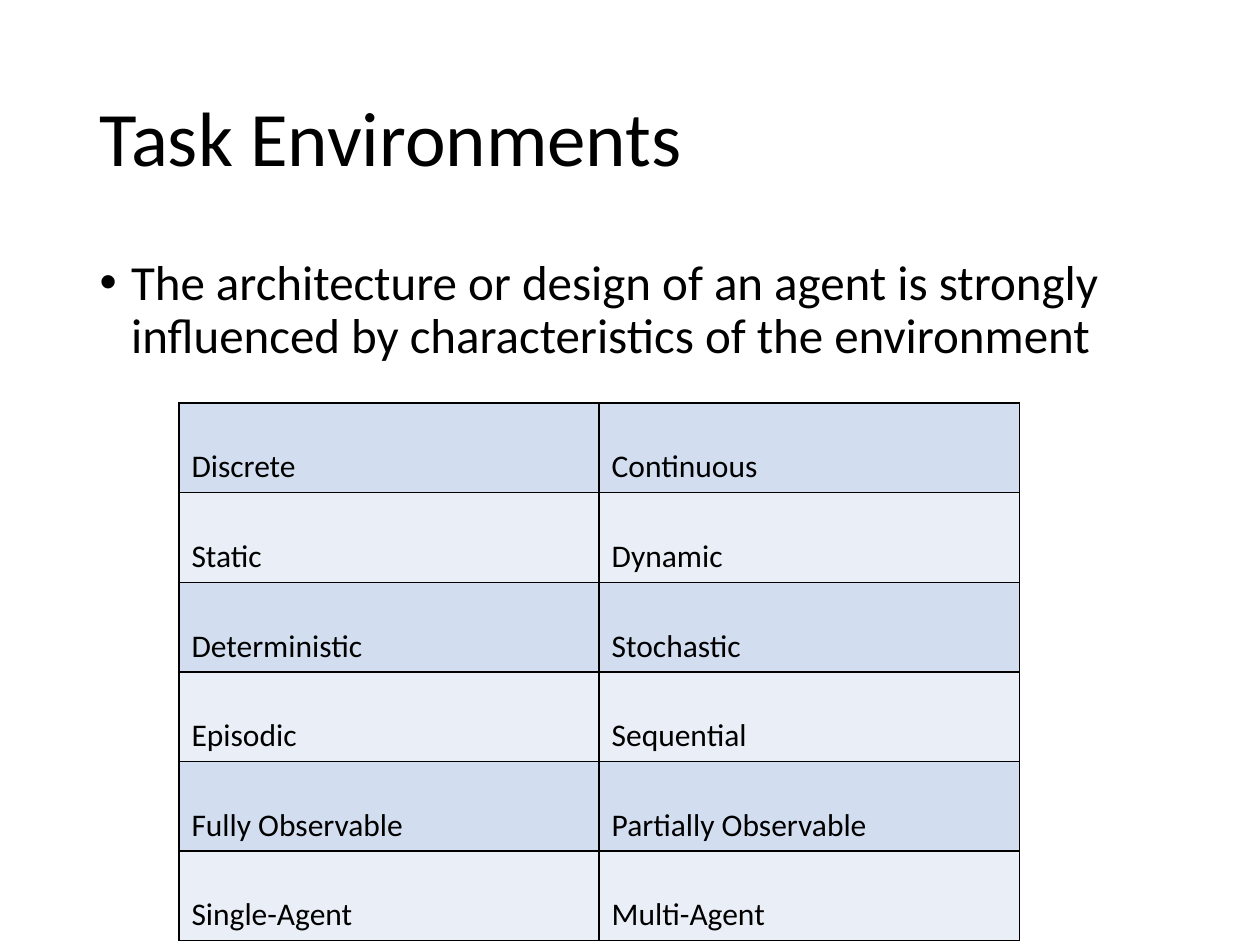
from lxml import etree
from pptx import Presentation
from pptx import util as u
from pptx.dml.color import RGBColor
from pptx.enum import text
from pptx.oxml import ns

PAIRS = [
    ("Discrete", "Continuous"),
    ("Static", "Dynamic"),
    ("Deterministic", "Stochastic"),
    ("Episodic", "Sequential"),
    ("Fully Observable", "Partially Observable"),
    ("Single-Agent", "Multi-Agent"),
]


def rgb(value):
    """Turn a hex string into a colour."""
    return RGBColor.from_string(value)


class Deck:
    """Hold the style and the current slide."""

    font, ink, bands = "Calibri", "000000", ("D2DEEF", "EAEFF7")

    def __init__(self, prs):
        """Add a title and content slide."""
        self.s = prs.slides.add_slide(prs.slide_layouts[1])

    def paragraph(self, tf, words, size, **formats):
        """Fill and format the first paragraph."""
        p = tf.paragraphs[0]
        for name, value in formats.items():
            setattr(p, name, value)
        r = p.add_run()
        r.text = words
        for name, value in {"name": self.font, "size": u.Pt(size)}.items():
            setattr(r.font, name, value)
        r.font.color.rgb = rgb(self.ink)
        return p

    def placeholder(self, index, box, words, size, anchor, **formats):
        """Move and fill a placeholder."""
        sp = self.s.placeholders[index]
        for name, value in zip(("left", "top", "width", "height"), box):
            setattr(sp, name, u.Inches(value))
        tf = sp.text_frame
        frame = {"word_wrap": True, "vertical_anchor": anchor,
                 "auto_size": text.MSO_AUTO_SIZE.NONE}
        for name, value in frame.items():
            setattr(tf, name, value)
        return self.paragraph(tf, words, size, line_spacing=0.9,
                              alignment=text.PP_ALIGN.LEFT, **formats)

    def title(self, box, words):
        """Fill the title."""
        self.placeholder(0, box, words, 44, text.MSO_ANCHOR.MIDDLE)

    def bullet(self, box, words):
        """Fill the body with one bullet."""
        p = self.placeholder(1, box, words, 28, text.MSO_ANCHOR.TOP,
                             space_before=u.Pt(10))
        pPr = p._p.get_or_add_pPr()
        for name, value in {"marL": 0.25, "indent": -0.25}.items():
            pPr.set(name, str(u.Inches(value)))
        etree.SubElement(pPr, ns.qn("a:buFont")).set("typeface", "Arial")
        etree.SubElement(pPr, ns.qn("a:buChar")).set("char", "•")

    def border(self, cell):
        """Draw a thin line on each side of a cell."""
        tcPr = cell._tc.get_or_add_tcPr()
        for i, side in enumerate("LRTB"):
            ln = etree.Element(ns.qn(f"a:ln{side}"), w=str(u.Pt(1)))
            fill = etree.SubElement(ln, ns.qn("a:solidFill"))
            etree.SubElement(fill, ns.qn("a:srgbClr")).set("val", self.ink)
            tcPr.insert(i, ln)

    def table(self, box, rows, row_height):
        """Add a banded table."""
        frame = self.s.shapes.add_table(len(rows), len(rows[0]), *map(u.Inches, box))
        for i, row in enumerate(rows):
            frame.table.rows[i].height = u.Inches(row_height)
            for j, words in enumerate(row):
                cell = frame.table.cell(i, j)
                cell.fill.solid()
                cell.fill.fore_color.rgb = rgb(self.bands[i % 2])
                self.border(cell)
                p = self.paragraph(cell.text_frame, words, 18, line_spacing=2.0)
                p.runs[0].font.bold = False
        frame.height = u.Inches(box[3])


def main():
    """Build the slide."""
    prs = Presentation()
    prs.slide_width, prs.slide_height = u.Inches(10), u.Inches(7.5)
    deck = Deck(prs)
    deck.title((0.69, 0.4, 8.62, 1.45), "Task Environments")
    deck.bullet((0.69, 2, 8.62, 4.76), "The architecture or design of an agent is "
                "strongly influenced by characteristics of the environment")
    deck.table((1.42, 3.2, 6.67, 4.2), PAIRS, 0.41)
    prs.save("out.pptx")


if __name__ == "__main__":
    main()
